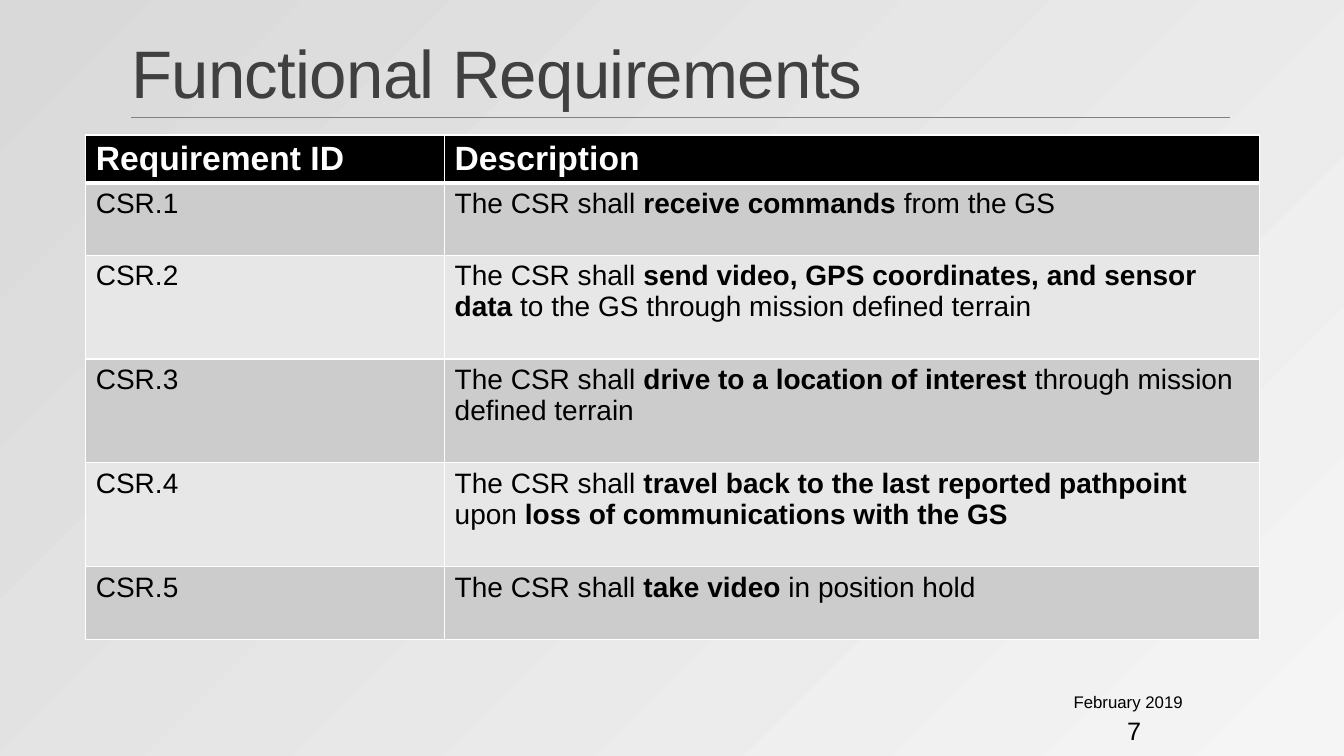
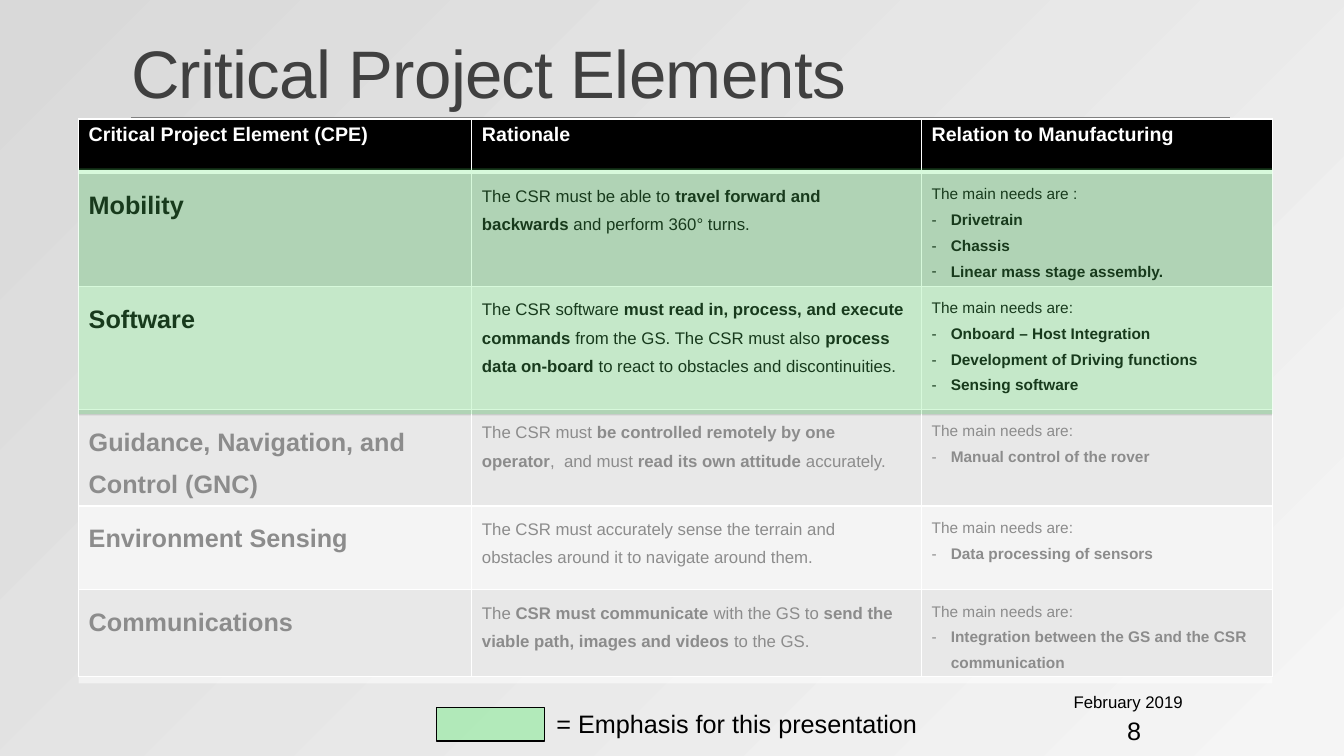
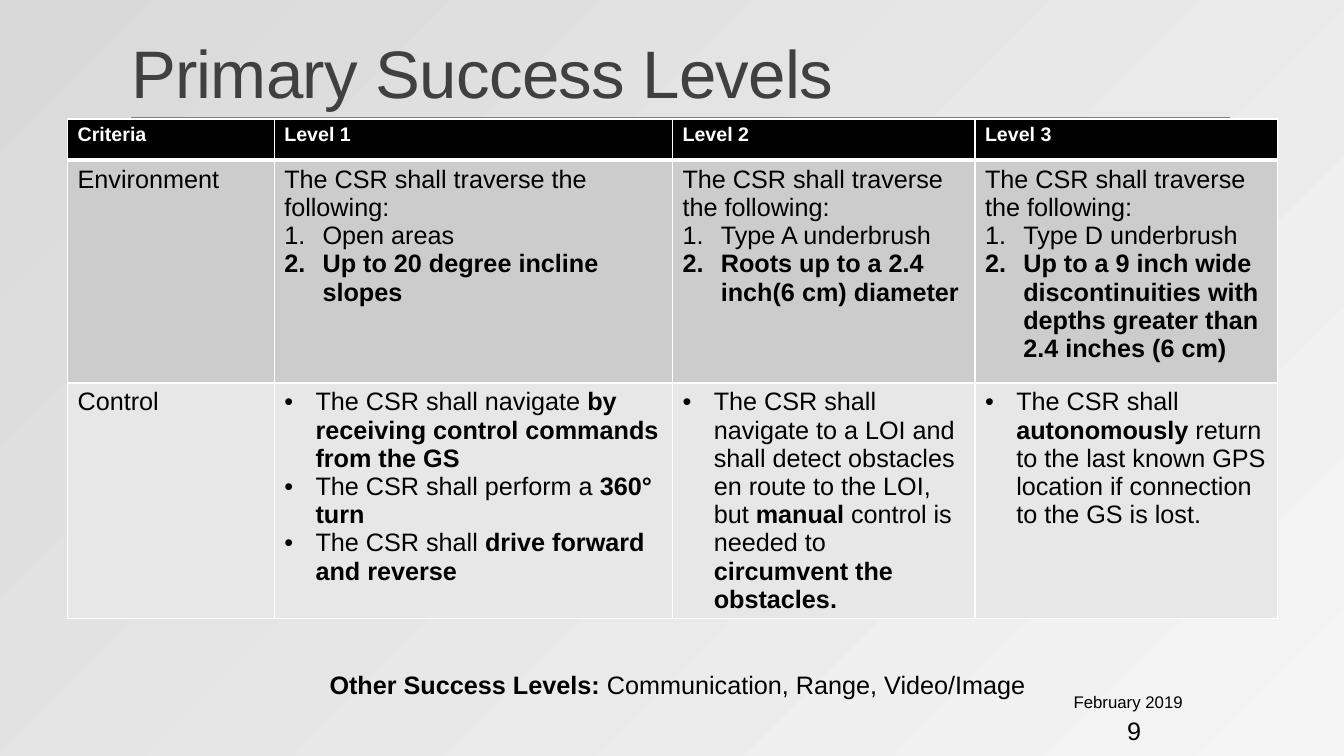
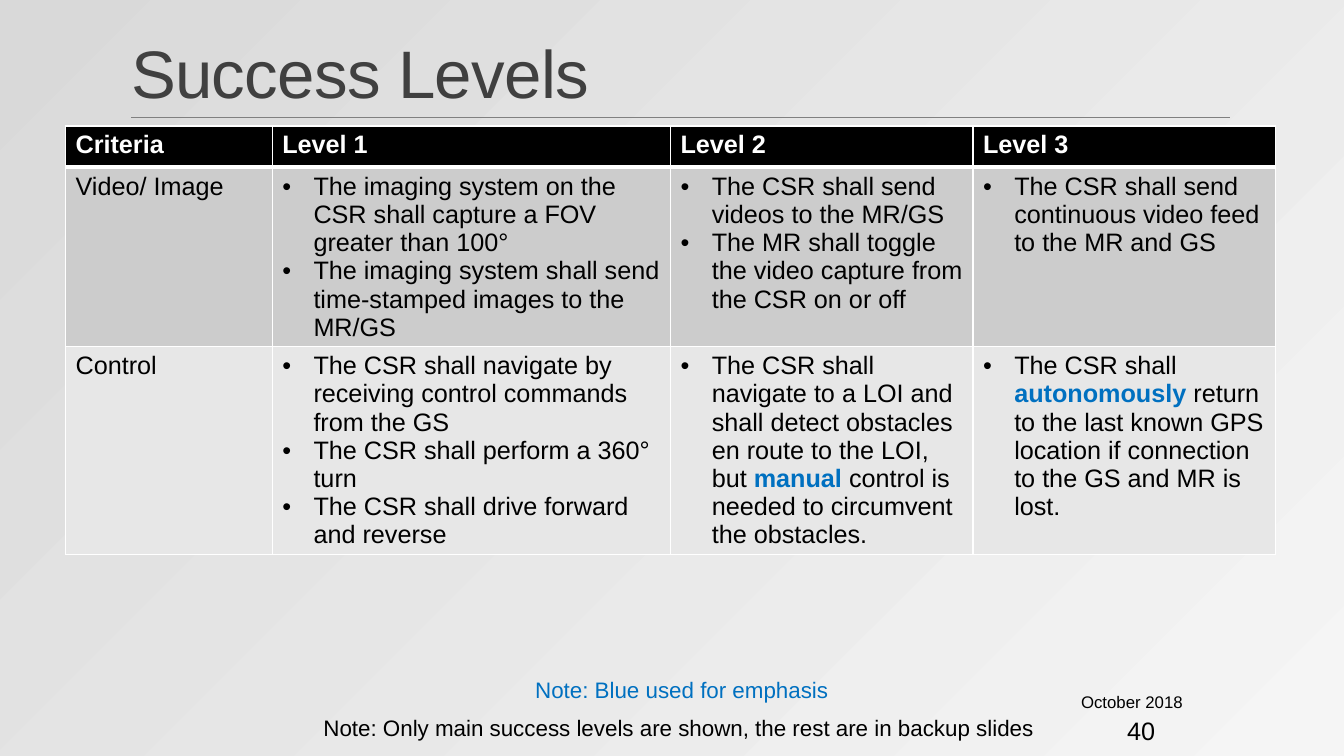
"""Build four slides on rover requirements and success levels."""
import lxml.etree
import pptx
import pptx.dml.color
import pptx.enum.shapes
import pptx.enum.text
import pptx.oxml.ns
import pptx.util

INCH = pptx.util.Inches
PT = pptx.util.Pt
ALIGN = pptx.enum.text.PP_ALIGN
FIT = pptx.enum.text.MSO_AUTO_SIZE

HEX = {
    "black": "000000", "white": "FFFFFF", "title": "404040", "rule": "808080",
    "dark": "CCCCCC", "light": "E7E7E7", "green": "60EB73", "blue": "0070C0",
    "near": "F5F5F5", "far": "D9D9D9",
}
MARKS = {
    "•": (0.31, "a:buChar", {"char": "•"}),
    "-": (0.19, "a:buChar", {"char": "-"}),
    "1.": (0.38, "a:buAutoNum", {"type": "arabicPeriod"}),
}
BOLD = {"bold": True}
BLUE = {"bold": True, "color": "blue"}
LEVELS = ["Criteria", "Level 1", "Level 2", "Level 3"]
WIDTHS = [2.05, 3.95, 3, 3]

NEEDS = [
    ["Critical Project Element (CPE)", "Rationale", "Relation to Manufacturing"],
    ["|Mobility|",
     "The CSR must be able to |travel forward and backwards |and perform 360° turns.",
     "The main needs are :\n- |Drivetrain|\n- |Chassis|\n- |Linear mass stage assembly.|"],
    ["|Software|",
     "The CSR software |must read in, process, and execute commands| from the GS. "
     "The CSR must also |process data on-board |to react to obstacles and discontinuities.",
     "The main needs are:\n- |Onboard – Host Integration|\n"
     "- |Development of Driving functions|\n- |Sensing software|"],
    ["|Guidance, Navigation, and Control (GNC)|",
     "The CSR must |be controlled remotely by one operator|,  and must "
     "|read its own attitude| accurately.",
     "The main needs are:\n- |Manual control of the rover|"],
    ["|Environment Sensing|",
     "The CSR must accurately sense the terrain and obstacles around it to navigate around them.",
     "The main needs are:\n- |Data processing of sensors|"],
    ["|Communications|",
     "The |CSR must communicate |with the GS to |send the viable path, images and videos| to the GS.",
     "The main needs are:\n- |Integration between the GS and the CSR communication|"],
]
DUTIES = [
    "The CSR shall |receive commands |from the GS",
    "The CSR shall |send video, GPS coordinates, and sensor data| to the GS "
    "through mission defined terrain",
    "The CSR shall |drive to a location of interest |through mission defined terrain",
    "The CSR shall |travel back to the last reported pathpoint |upon "
    "|loss of communications with the GS|",
    "The CSR shall |take video |in position hold",
]
PRIMARY = [
    LEVELS,
    ["Environment",
     "The CSR shall traverse the following:\n1. Open areas\n1. |Up to 20 degree incline slopes|",
     "The CSR shall traverse the following:\n1. Type A underbrush\n"
     "1. |Roots up to a 2.4 inch(6 cm) diameter|",
     "The CSR shall traverse the following:\n1. Type D underbrush\n"
     "1. |Up to a 9 inch wide discontinuities with depths greater than 2.4 inches (6 cm)|"],
    ["Control",
     "• The CSR shall navigate |by receiving control commands from the GS|\n"
     "• The CSR shall perform a |360° turn|\n• The CSR shall |drive forward and reverse|",
     "• The CSR shall navigate to a LOI and shall detect obstacles en route to the LOI, "
     "but |manual| control is needed to |circumvent the obstacles.|",
     "• The CSR shall |autonomously| return to the last known GPS location "
     "if connection to the GS is lost."],
]
SUCCESS = [
    LEVELS,
    ["Video/ Image",
     "• The imaging system on the CSR shall capture a FOV greater than 100°\n"
     "• The imaging system shall send time-stamped images to the MR/GS",
     "• The CSR shall send videos to the MR/GS\n"
     "• The MR shall toggle the video capture from the CSR on or off",
     "• The CSR shall send continuous video feed to the MR and GS"],
    ["Control",
     "• The CSR shall navigate by receiving control commands from the GS\n"
     "• The CSR shall perform a 360° turn\n• The CSR shall drive forward and reverse",
     "• The CSR shall navigate to a LOI and shall detect obstacles en route to the LOI, "
     "but |manual| control is needed to circumvent the obstacles.",
     "• The CSR shall |autonomously| return to the last known GPS location "
     "if connection to the GS and MR is lost."],
]


def rgb(name):
    """Return the named colour."""
    return pptx.dml.color.RGBColor.from_string(HEX[name])


def node(root, tag, **vals):
    """Append an XML child with the given attributes."""
    return lxml.etree.SubElement(root, pptx.oxml.ns.qn(tag), vals)


def put(item, vals):
    """Set attributes of an object from a dict."""
    for key, val in vals.items():
        setattr(item, key, val)


def style(font, size, color="black", bold=False):
    """Format one font."""
    put(font, {"name": "Arial", "size": PT(size), "bold": bold})
    font.color.rgb = rgb(color)


def write(frame, words, look, stress=BOLD, **form):
    """Fill a frame, one paragraph a line, with stress between bars."""
    for num, line in enumerate(words.split("\n")):
        para = frame.add_paragraph() if num else frame.paragraphs[0]
        mark, _, rest = line.partition(" ")
        if mark in MARKS:
            line = rest
            dent, tag, vals = MARKS[mark]
            props = para._p.get_or_add_pPr()
            props.set("marL", str(INCH(dent)))
            props.set("indent", str(-INCH(dent)))
            node(props, "a:buFont", typeface="Arial")
            node(props, tag, **vals)
        put(para, form)
        for part, piece in enumerate(line.split("|")):
            if piece:
                run = para.add_run()
                run.text = piece
                style(run.font, **{**look, **(stress if part % 2 else {})})


def label(slide, box, words, size, color="black", wrap=True, **form):
    """Add a text box."""
    frame = slide.shapes.add_textbox(*map(INCH, box)).text_frame
    put(frame, {"word_wrap": wrap, "auto_size": FIT.NONE if wrap else FIT.SHAPE_TO_FIT_TEXT})
    write(frame, words, {"size": size, "color": color}, **form)


def veil(slide, box, color, alpha, edge=None):
    """Add a see-through rectangle."""
    shape = slide.shapes.add_shape(
        pptx.enum.shapes.MSO_SHAPE.RECTANGLE, *map(INCH, box))
    shape.shadow.inherit = False
    shape.fill.solid()
    shape.fill.fore_color.rgb = rgb(color)
    tint = shape.fill._xPr.find(".//" + pptx.oxml.ns.qn("a:srgbClr"))
    node(tint, "a:alpha", val=str(alpha * 1000))
    if edge:
        shape.line.color.rgb = rgb(edge)
        shape.line.width = PT(1.25)
    else:
        shape.line.fill.background()


def border(cell, base):
    """Draw white cell edges, with the given width at the base."""
    props = cell._tc.get_or_add_tcPr()
    for num, (side, width) in enumerate({"L": 1, "R": 1, "T": 1, "B": base}.items()):
        edge = lxml.etree.Element(pptx.oxml.ns.qn("a:ln" + side), w=str(PT(width)))
        node(node(edge, "a:solidFill"), "a:srgbClr", val=HEX["white"])
        props.insert(num, edge)


def grid(slide, spot, cols, rows, cells, head, sizes, stress=BOLD, **form):
    """Add a table with a black head and banded rows."""
    table = slide.shapes.add_table(
        len(rows), len(cols), *map(INCH, (*spot, sum(cols), sum(rows)))).table
    put(table, {"first_row": False, "horz_banding": False})
    for col, width in zip(table.columns, cols):
        col.width = INCH(width)
    for num, (row, high) in enumerate(zip(table.rows, rows)):
        row.height = INCH(high)
        for cell, words, size in zip(row.cells, cells[num], sizes):
            cell.fill.solid()
            cell.fill.fore_color.rgb = rgb(
                ("dark" if num % 2 else "light") if num else "black")
            border(cell, 1 if num else 3)
            if num:
                write(cell.text_frame, words, {"size": size}, stress, **form)
            else:
                write(cell.text_frame, words, {"size": head, "color": "white", "bold": True})


def backdrop(deck):
    """Give the master its round gradient."""
    master = deck.slide_master
    fill = master.background.fill
    fill.gradient()
    for stop, name in zip(fill.gradient_stops, ("near", "far")):
        stop.color.rgb = rgb(name)
    line = master.element.find(".//" + pptx.oxml.ns.qn("a:lin"))
    grad = line.getparent()
    grad.remove(line)
    node(node(grad, "a:path", path="circle"), "a:fillToRect",
         l="100000", t="100000", r="0", b="0")


def base(deck, name, page, date="February 2019"):
    """Add a slide with title, rule, date and number."""
    slide = deck.slides.add_slide(deck.slide_layouts[5])
    rule = slide.shapes.add_connector(
        pptx.enum.shapes.MSO_CONNECTOR.STRAIGHT, *map(INCH, (1.3, 1.16, 12.2, 1.16)))
    rule.line.color.rgb = rgb("rule")
    rule.line.width = PT(0.5)
    node(rule._element.spPr, "a:effectLst")
    title = slide.shapes.title
    put(title, dict(zip(("left", "top", "width", "height"), map(INCH, (1.2, 0.31, 11, 0.85)))))
    frame = title.text_frame
    put(frame, {"word_wrap": True, "auto_size": FIT.NONE,
                "vertical_anchor": pptx.enum.text.MSO_ANCHOR.BOTTOM})
    write(frame, name, {"size": 48, "color": "title"}, alignment=ALIGN.LEFT, line_spacing=0.85)
    frame.paragraphs[0].runs[0].font._element.set("spc", "-50")
    label(slide, (11.08, 7.05, 0.76, 0.4), str(page), 18)
    label(slide, (10.44, 6.81, 1.39, 0.23), date, 12, alignment=ALIGN.RIGHT)
    return slide


def main():
    """Build and save the deck."""
    deck = pptx.Presentation()
    put(deck, {"slide_width": INCH(13.33), "slide_height": INCH(7.5)})
    backdrop(deck)

    slide = base(deck, "Functional Requirements", 7)
    cells = [["Requirement ID", "Description"]]
    cells += [[f"CSR.{num}", duty] for num, duty in enumerate(DUTIES, 1)]
    grid(slide, (0.85, 1.34), [3.56, 8.08], [0.46, 0.72, 1.03, 1.03, 1.03, 0.72],
         cells, 24, [20] * 2)

    slide = base(deck, "Critical Project Elements", 8)
    grid(slide, (0.78, 1.18), [3.9, 4.46, 3.48], [0.53, 1.13, 1.22, 0.96, 0.83, 0.86],
         NEEDS, 14, [18, 12, 11], line_spacing=1.5)
    veil(slide, (0.78, 1.67, 11.84, 2.44), "green", 25)
    veil(slide, (0.78, 4.12, 11.84, 2.66), "white", 55)
    veil(slide, (4.33, 7.02, 1.07, 0.33), "green", 40, "black")
    label(slide, (5.42, 6.98, 3.81, 0.4), "= Emphasis for this presentation", 18, wrap=False)

    slide = base(deck, "Primary Success Levels", 9)
    grid(slide, (0.67, 1.18), WIDTHS, [0.41, 2.21, 2.34], PRIMARY, 14, [18] * 4)
    label(slide, (3.17, 6.59, 7.6, 0.4),
          "|Other Success Levels: |Communication, Range, Video/Image", 18)

    slide = base(deck, "Success Levels", 40, "October 2018")
    grid(slide, (0.65, 1.25), WIDTHS, [0.41, 1.78, 2.06], SUCCESS, 18, [18] * 4, BLUE)
    label(slide, (3.11, 7.04, 7.34, 0.37),
          "Note: Only main success levels are shown, the rest are in backup slides", 16, wrap=False)
    label(slide, (5.21, 6.66, 3.15, 0.37), "Note: Blue used for emphasis", 16, "blue", False)

    deck.save("out.pptx")


if __name__ == "__main__":
    main()
